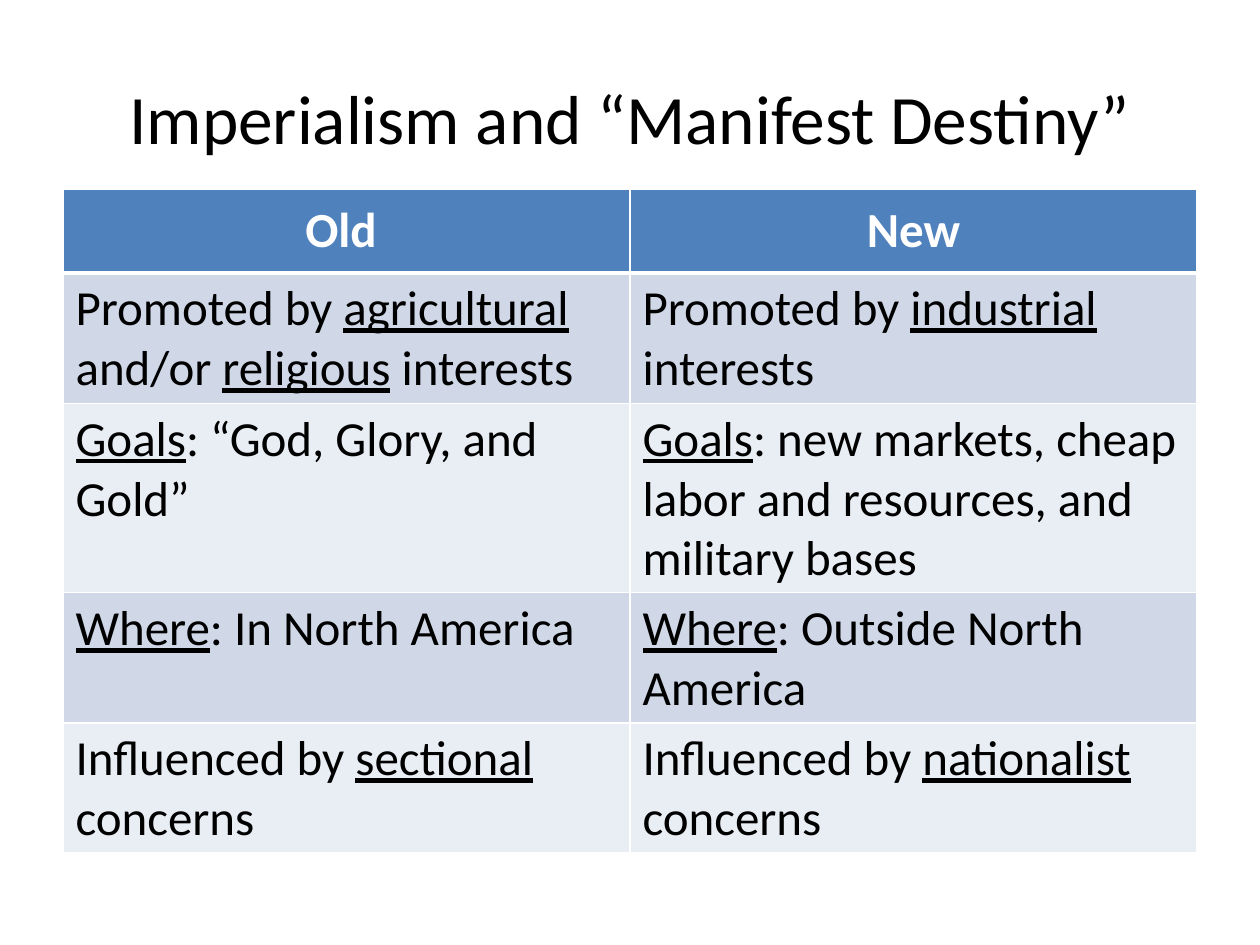
from dataclasses import dataclass

from lxml.etree import SubElement
from pptx import Presentation
from pptx.dml.color import RGBColor
from pptx.enum.text import MSO_ANCHOR, PP_ALIGN
from pptx.oxml.ns import qn
from pptx.util import Emu, Pt

PX_PER_INCH = 126
FONT = "Calibri"
BLACK = RGBColor(0x00, 0x00, 0x00)
WHITE = RGBColor(0xFF, 0xFF, 0xFF)
HEADER_BLUE = RGBColor(0x4F, 0x81, 0xBD)
BANDS = (RGBColor(0xD0, 0xD8, 0xE8), RGBColor(0xE9, 0xED, 0xF4))
THIN, THICK = Pt(1), Pt(3)


@dataclass(frozen=True)
class Row:
    """One table row; underscores enclose underlined words."""
    height: int
    old: str
    new: str


ROWS = (
    Row(84, "Old ", "New"),
    Row(116, "Promoted by _agricultural_ and/or _religious_ interests",
        "Promoted by _industrial_ interests"),
    Row(136, "_Goals_: “God, Glory, and Gold”",
        "_Goals_: new markets, cheap labor and resources, and military bases"),
    Row(126, "_Where_: In North America", "_Where_: Outside North America"),
    Row(105, "Influenced by _sectional _concerns",
        "Influenced by _nationalist_ concerns"),
)


def px(length: int) -> Emu:
    return Emu(round(length * 914400 / PX_PER_INCH))


def write_text(paragraph, text: str, size: float, color: RGBColor,
               bold: bool = False) -> None:
    for index, part in enumerate(text.split("_")):
        if not part:
            continue
        run = paragraph.add_run()
        run.text = part
        run.font.color.rgb = color
        font_values = {"name": FONT, "size": Pt(size), "bold": bold,
                       "underline": index % 2 == 1}
        for name, value in font_values.items():
            setattr(run.font, name, value)


def set_borders(cell, top: int, bottom: int) -> None:
    properties = cell._tc.get_or_add_tcPr()
    widths = {"a:lnL": THIN, "a:lnR": THIN, "a:lnT": top, "a:lnB": bottom}
    for index, (tag, width) in enumerate(widths.items()):
        line = SubElement(properties, qn(tag), w=str(int(width)))
        fill = SubElement(line, qn("a:solidFill"))
        SubElement(fill, qn("a:srgbClr"), val=str(WHITE))
        properties.insert(index, line)  # borders must precede the fill


def add_title(slide, text: str) -> None:
    shape = slide.shapes.add_textbox(px(63), px(38), px(1134), px(157))
    frame = shape.text_frame
    frame.word_wrap = True
    frame.vertical_anchor = MSO_ANCHOR.MIDDLE
    paragraph = frame.paragraphs[0]
    paragraph.alignment = PP_ALIGN.CENTER
    write_text(paragraph, text, 39.6, BLACK)


def fill_cell(cell, text: str, row_index: int) -> None:
    is_header = row_index == 0
    cell.fill.solid()
    cell.fill.fore_color.rgb = (
        HEADER_BLUE if is_header else BANDS[(row_index - 1) % 2])
    set_borders(cell, top=THICK if row_index == 1 else THIN,
                bottom=THICK if is_header else THIN)
    paragraph = cell.text_frame.paragraphs[0]
    if is_header:
        cell.vertical_anchor = MSO_ANCHOR.MIDDLE
        paragraph.alignment = PP_ALIGN.CENTER
    write_text(paragraph, text, 28, WHITE if is_header else BLACK, is_header)


def add_comparison_table(slide, rows: tuple[Row, ...]) -> None:
    height = sum(row.height for row in rows)
    table = slide.shapes.add_table(
        len(rows), 2, px(63), px(189), px(1134), px(height)).table
    table.first_row = False
    table.horz_banding = False
    for row_index, row in enumerate(rows):
        table.rows[row_index].height = px(row.height)
        for column_index, text in enumerate((row.old, row.new)):
            fill_cell(table.cell(row_index, column_index), text, row_index)


def main() -> None:
    presentation = Presentation()
    presentation.slide_width = px(1260)
    presentation.slide_height = px(945)
    slide = presentation.slides.add_slide(presentation.slide_layouts[6])
    add_title(slide, "Imperialism and “Manifest Destiny”")
    add_comparison_table(slide, ROWS)
    presentation.save("out.pptx")


if __name__ == "__main__":
    main()
